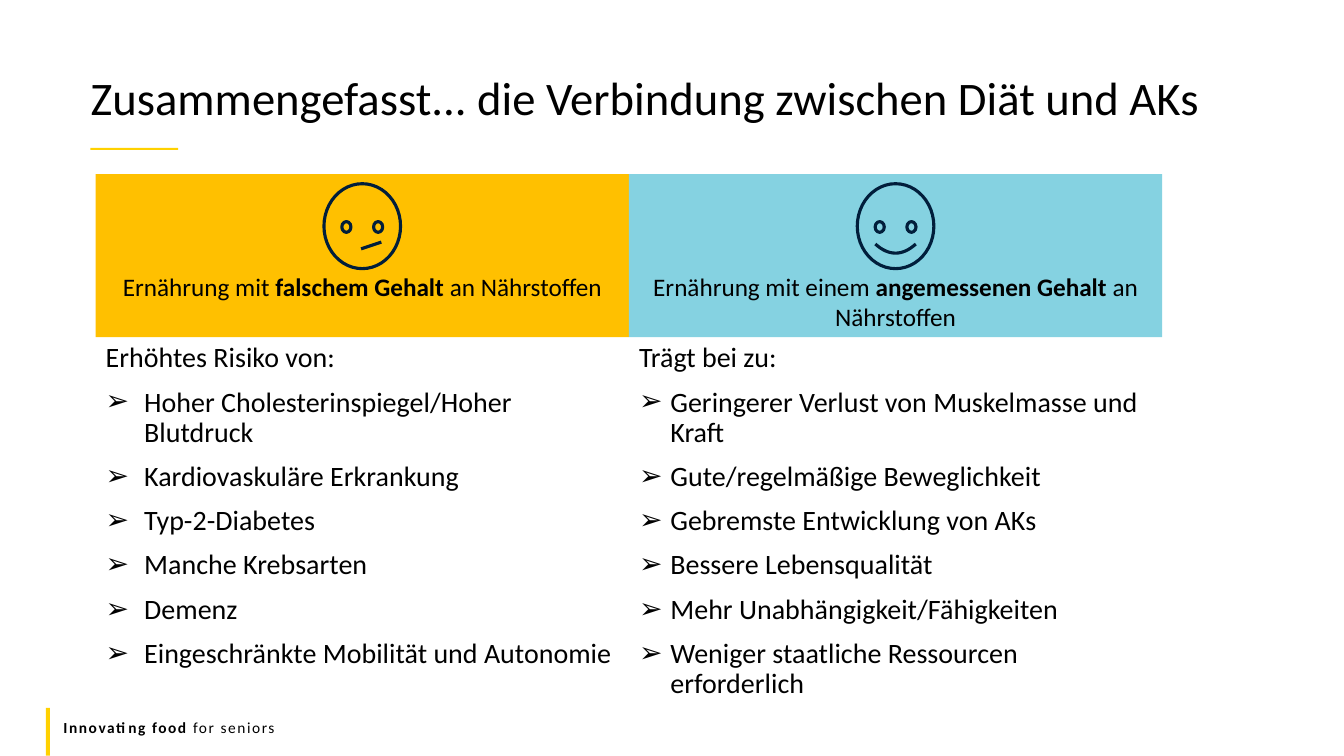
from lxml import etree
from pptx import Presentation
from pptx import util as u
from pptx.dml.color import RGBColor
from pptx.enum import shapes as sh, text as tx
from pptx.oxml.ns import qn

YELLOW, NAVY, BLACK = "FFD100", "011E3B", "000000"
LEFT, TOP, COL, BAND = 2.41, 4.39, 13.44, 4.11
LIST = 10

SIDES = [
    dict(fill="FFC000", happy=False, indent=0.97,
         head=["Ernährung mit ", ("falschem Gehalt ",), "an Nährstoffen"],
         lead="Erhöhtes Risiko von:",
         items=["Hoher Cholesterinspiegel/Hoher Blutdruck",
                "Kardiovaskuläre Erkrankung", "Typ-2-Diabetes",
                "Manche Krebsarten", "Demenz",
                "Eingeschränkte Mobilität und Autonomie"]),
    dict(fill="85D2E1", happy=True, indent=0.79,
         head=["Ernährung mit einem ", ("angemessenen Gehalt ",), "an Nährstoffen"],
         lead="Trägt bei zu:",
         items=["Geringerer Verlust von Muskelmasse und Kraft",
                "Gute/regelmäßige Beweglichkeit",
                "Gebremste Entwicklung von AKs", "Bessere Lebensqualität",
                "Mehr Unabhängigkeit/Fähigkeiten",
                "Weniger staatliche Ressourcen erforderlich"]),
]


def rgb(code):
    return RGBColor.from_string(code)


def cm(*nums):
    return [u.Cm(n) for n in nums]


def place(shape, *box):
    shape.left, shape.top, shape.width, shape.height = cm(*box)


def bullet(para, sign, indent):
    props = para._p.get_or_add_pPr()
    props.set("marL", str(u.Cm(indent)))
    props.set("indent", str(-u.Cm(indent)))
    if sign:
        font = etree.SubElement(props, qn("a:buFont"))
        font.set("typeface", "Arial")
        etree.SubElement(props, qn("a:buChar")).set("char", sign)
    else:
        etree.SubElement(props, qn("a:buNone"))


def write(para, runs, size, align=tx.PP_ALIGN.LEFT, line=1.0, before=0, track=0):
    """Fill a paragraph; a run given as a tuple is bold."""
    para.alignment, para.line_spacing = align, line
    para.space_before = u.Pt(before)
    for part in runs:
        run = para.add_run()
        bold = isinstance(part, tuple)
        run.text = part[0] if bold else part
        font = run.font
        font.name, font.size, font.bold = "Calibri", u.Pt(size), bold
        font.color.rgb = rgb(BLACK)
        if track:
            run._r.get_or_add_rPr().set("spc", str(track))


def setup(frame, anchor=tx.MSO_ANCHOR.TOP):
    frame.word_wrap = True
    frame.auto_size = tx.MSO_AUTO_SIZE.NONE
    frame.vertical_anchor = anchor
    return frame


def block(slide, fill, *box):
    shape = slide.shapes.add_shape(sh.MSO_SHAPE.RECTANGLE, *cm(*box))
    shape.shadow.inherit = False
    shape.fill.solid()
    shape.fill.fore_color.rgb = rgb(fill)
    shape.line.fill.background()
    return shape


def stroke(shape):
    shape.line.color.rgb = rgb(NAVY)
    shape.line.width = u.Pt(2.25)


def ring(parts, x, y, w, h):
    """Draw an outlined oval around the centre x, y."""
    oval = parts.add_shape(sh.MSO_SHAPE.OVAL, *cm(x - w / 2, y - h / 2, w, h))
    oval.shadow.inherit = False
    oval.fill.background()
    stroke(oval)


def face(slide, x, y, happy):
    parts = slide.shapes.add_group_shape().shapes
    ring(parts, x, y, 1.93, 2.14)
    for side in (-1, 1):
        ring(parts, x + side * 0.4, y + 0.02, 0.23, 0.27)
    if happy:
        steps = [n / 8 for n in range(-8, 9)]
        curve = [(u.Cm(x + 0.51 * t), u.Cm(y + 0.45 + 0.23 * (1 - t * t)))
                 for t in steps]
        pen = parts.build_freeform(*curve[0])
        pen.add_line_segments(curve[1:], close=False)
        smile = pen.convert_to_shape()
        smile.shadow.inherit = False
        smile.fill.background()
        stroke(smile)
    else:
        mouth = parts.add_connector(sh.MSO_CONNECTOR.STRAIGHT,
                                    *cm(x - 0.03, y + 0.57, x + 0.48, y + 0.4))
        stroke(mouth)
        etree.SubElement(mouth._element.spPr, qn("a:effectLst"))


def column(slide, body, x, y, w, side):
    band = block(slide, side["fill"], x, y, w, BAND)
    frame = setup(band.text_frame)
    frame.margin_top = u.Cm(2.45)
    write(frame.paragraphs[0], side["head"], 18, align=tx.PP_ALIGN.CENTER)
    face(slide, x + w / 2, y + 1.31, side["happy"])

    place(body, x, y + BAND + 0.03, w, LIST)
    frame = setup(body.text_frame)
    bullet(frame.paragraphs[0], None, 0)
    write(frame.paragraphs[0], [side["lead"]], 20, line=0.9)
    for item in side["items"]:
        para = frame.add_paragraph()
        bullet(para, "➢", side["indent"])
        write(para, [item], 20, line=0.9, before=10)


def header(slide, x, y, w):
    title = slide.shapes.title
    place(title, x, y, w, 1.63)
    para = setup(title.text_frame).paragraphs[0]
    write(para, ["Zusammengefasst... die Verbindung zwischen Diät und AKs"],
          33.3, line=0.9)
    block(slide, YELLOW, x + 0.25, y + 1.95, 2.21, 0.05)


def footer(slide, x, y):
    block(slide, YELLOW, x, y, 0.1, 1.2)
    box = slide.shapes.add_textbox(*cm(x + 0.19, y + 0.11, 30.48, 0.74))
    frame = setup(box.text_frame, tx.MSO_ANCHOR.MIDDLE)
    write(frame.paragraphs[0], [("Innovating food ",), "for seniors"], 11, track=110)


def main():
    deck = Presentation()
    deck.slide_width, deck.slide_height = cm(33.87, 19.05)
    slide = deck.slides.add_slide(deck.slide_layouts[3])
    header(slide, 2.03, 1.78, 29.44)
    for n, side in enumerate(SIDES):
        column(slide, slide.placeholders[n + 1], LEFT + n * COL, TOP, COL, side)
    footer(slide, 1.16, 17.84)
    deck.save("out.pptx")


if __name__ == "__main__":
    main()
